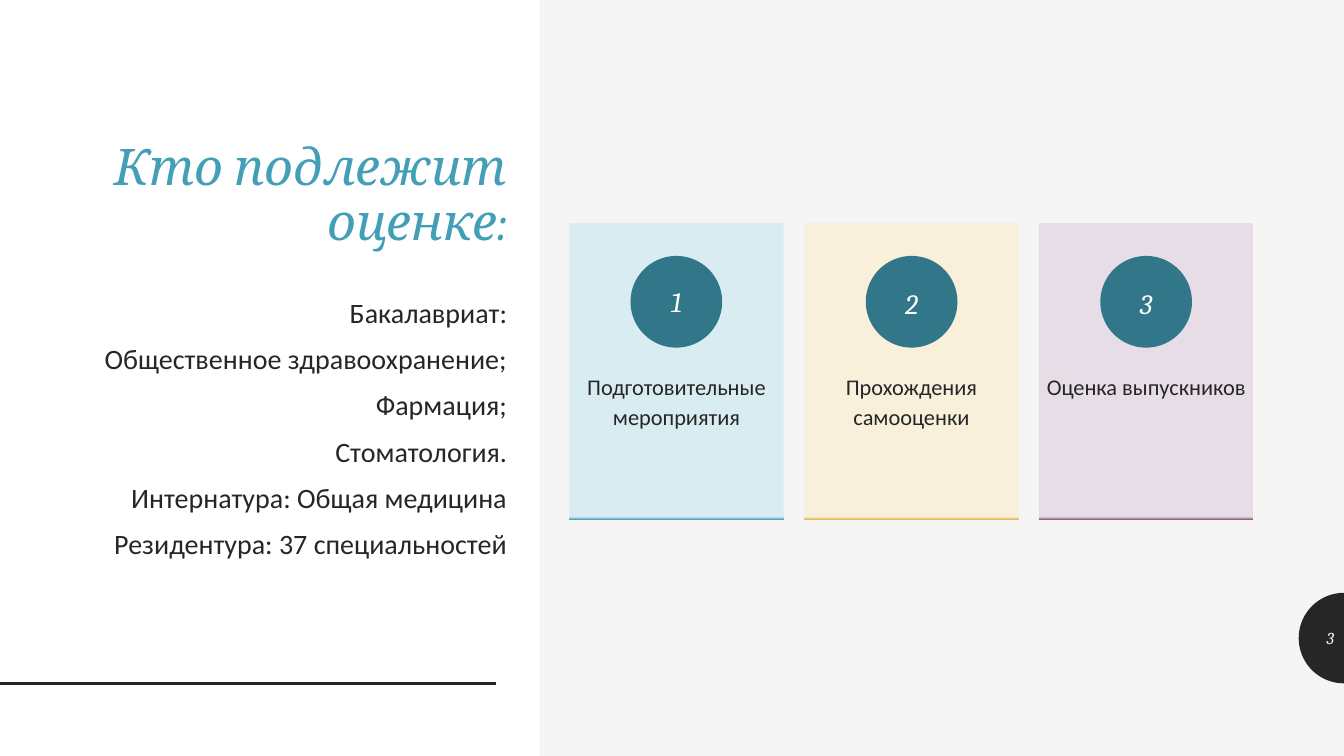
from math import cos, pi, sin

from lxml import etree
from pptx import Presentation
from pptx import util as u
from pptx.dml.color import RGBColor
from pptx.enum import shapes, text
from pptx.oxml.ns import qn

HEADING = "Кто подлежит оценке:"
PROGRAMMES = [
    "Бакалавриат:",
    "Общественное здравоохранение;",
    "Фармация;",
    "Стоматология.",
    "Интернатура: Общая медицина",
    "Резидентура: 37 специальностей",
]
STAGES = [
    ("1", "Подготовительные мероприятия", "D9ECF1", "439EB7", 1.0),
    ("2", "Прохождения самооценки", "F8F0DB", "DCB64D", 1.12),
    ("3", "Оценка выпускников", "E7DDE7", "835B82", 1.12),
]
PAGE = "3"

DARK, LIGHT, WHITE, TEAL, BLUE = "262626", "F5F5F5", "FFFFFF", "327689", "439EB7"
WIDTH, HEIGHT = 33.87, 19.05
CARD_LEFT, CARD_TOP, CARD_WIDTH, CARD_HEIGHT, CARD_PITCH = 14.35, 5.61, 5.4, 7.49, 5.92
BADGE_TOP, BADGE_SIZE = 6.45, 2.31
TAB_MIDDLE, TAB_RADIUS = 16.08, 1.14
ALIGN, ANCHOR = text.PP_ALIGN, text.MSO_ANCHOR


def rgb(colour):
    return RGBColor.from_string(colour)


def box(left, top, width, height):
    return [u.Cm(round(v, 2)) for v in (left, top, width, height)]


def plain(part, colour):
    part.shadow.inherit = False
    part.fill.solid()
    part.fill.fore_color.rgb = rgb(colour)
    part.line.fill.background()
    return part


def write(part, lines, font, size, colour, align, anchor=ANCHOR.TOP,
          spacing=1.0, before=0, insets=None):
    frame = part.text_frame
    frame.text = "\n".join(lines)
    frame.word_wrap = True
    frame.auto_size = text.MSO_AUTO_SIZE.NONE
    frame.vertical_anchor = anchor
    if insets:
        (frame.margin_left, frame.margin_top,
         frame.margin_right, frame.margin_bottom) = [u.Cm(v) for v in insets]
    for paragraph in frame.paragraphs:
        paragraph.alignment = align
        paragraph.line_spacing = spacing
        paragraph.space_before = u.Pt(before)
        for run in paragraph.runs:
            run.font.name = font
            run.font.size = u.Pt(size)
            run.font.italic = font == "Cambria"
            run.font.color.rgb = rgb(colour)


def add_card(slide, index, stage):
    number, label, pale, edge, spacing = stage
    left = CARD_LEFT + index * CARD_PITCH
    card = plain(slide.shapes.add_shape(
        shapes.MSO_SHAPE.RECTANGLE, *box(left, CARD_TOP, CARD_WIDTH, CARD_HEIGHT)), pale)
    card.fill.gradient()
    card.fill.gradient_angle = 270
    for stop, position, colour in zip(card.fill.gradient_stops, (0.99, 1.0), (pale, edge)):
        stop.position = position
        stop.color.rgb = rgb(colour)
    write(card, [label], "Calibri", 16, DARK, ALIGN.CENTER,
          spacing=1.12, before=9, insets=(0, 3.71, 0, 0))

    badge_left = left + (CARD_WIDTH - BADGE_SIZE) / 2
    badge = plain(slide.shapes.add_shape(
        shapes.MSO_SHAPE.OVAL, *box(badge_left, BADGE_TOP, BADGE_SIZE, BADGE_SIZE)), TEAL)
    write(badge, [number], "Cambria", 20, WHITE, ALIGN.CENTER, ANCHOR.MIDDLE,
          spacing=spacing, before=9, insets=(0, 0, 0, 0))


def add_page_tab(slide):
    steps = 48
    arc = [(u.Cm(WIDTH - TAB_RADIUS * sin(pi * i / steps)),
            u.Cm(TAB_MIDDLE - TAB_RADIUS * cos(pi * i / steps))) for i in range(steps + 1)]
    outline = slide.shapes.build_freeform(*arc[0])
    outline.add_line_segments(arc[1:], close=True)
    plain(outline.convert_to_shape(), DARK)


def main():
    deck = Presentation()
    deck.slide_width, deck.slide_height = u.Cm(WIDTH), u.Cm(HEIGHT)
    slide = deck.slides.add_slide(deck.slide_layouts[5])
    slide.background.fill.solid()
    slide.background.fill.fore_color.rgb = rgb(LIGHT)

    add_page_tab(slide)
    plain(slide.shapes.add_shape(
        shapes.MSO_SHAPE.RECTANGLE, *box(0, 0, 13.6, HEIGHT)), WHITE)
    rule = slide.shapes.add_connector(
        shapes.MSO_CONNECTOR.STRAIGHT, 0, u.Cm(17.22), u.Cm(12.5), u.Cm(17.22))
    rule.line.color.rgb = rgb(DARK)
    rule.line.width = u.Pt(2)
    etree.SubElement(rule._element.spPr, qn("a:effectLst"))

    title = slide.shapes.title
    slide.shapes._spTree.append(title._element)
    title.left, title.top, title.width, title.height = box(1.83, 3.18, 11.2, 3.28)
    write(title, [HEADING], "Cambria", 36, BLUE, ALIGN.RIGHT, ANCHOR.BOTTOM, spacing=0.9)

    for index, stage in enumerate(STAGES):
        add_card(slide, index, stage)

    programmes = slide.shapes.add_textbox(*box(2.03, 7.32, 11, 9.91))
    write(programmes, PROGRAMMES, "Calibri", 20, DARK, ALIGN.RIGHT, before=9)
    page = slide.shapes.add_textbox(*box(WIDTH - TAB_RADIUS, 15.57, TAB_RADIUS, 1.02))
    write(page, [PAGE], "Cambria", 12, LIGHT, ALIGN.RIGHT, ANCHOR.MIDDLE)

    deck.save("out.pptx")


if __name__ == "__main__":
    main()
